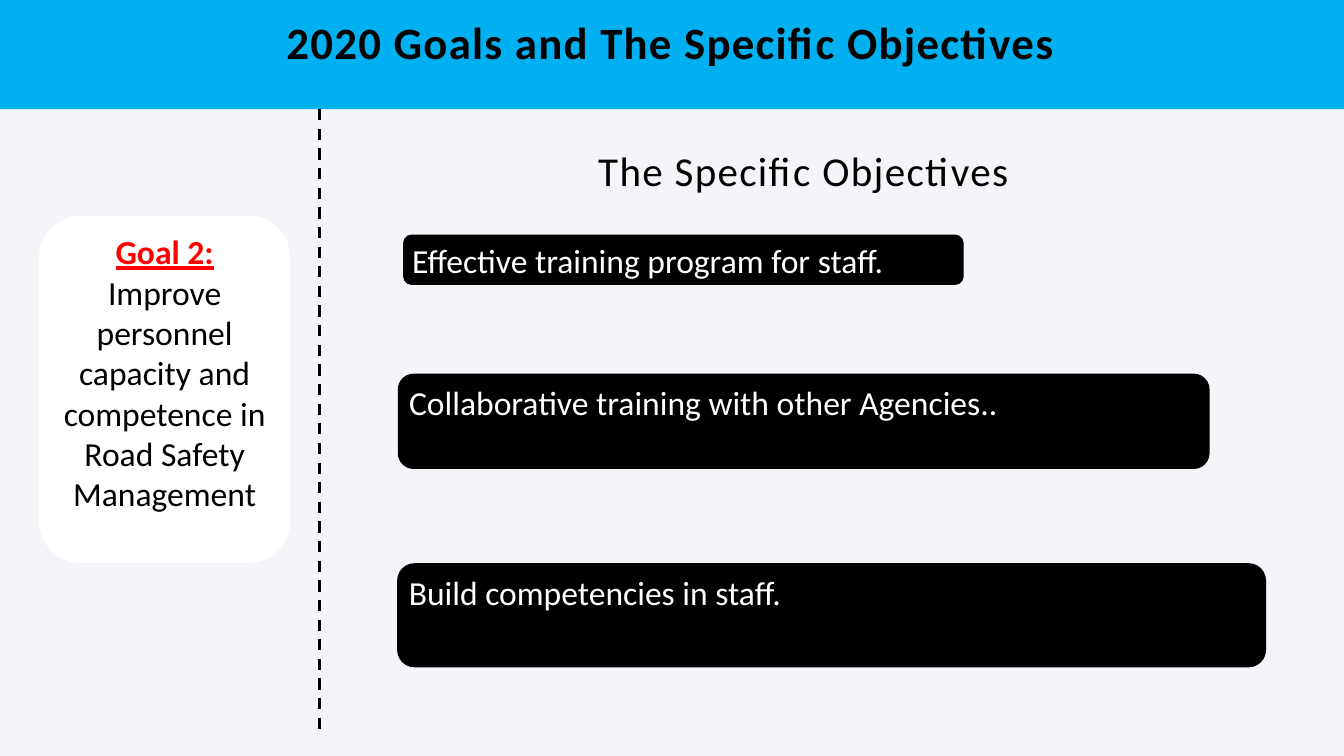
import pptx
import pptx.dml.color
import pptx.enum.dml
import pptx.enum.shapes
import pptx.enum.text
import pptx.oxml.ns
import pptx.util
from lxml import etree

Pt = pptx.util.Pt
RGBColor = pptx.dml.color.RGBColor
SHAPE = pptx.enum.shapes.MSO_SHAPE
ALIGN = pptx.enum.text.PP_ALIGN

PALE = RGBColor(0xF3, 0xF5, 0xF9)
BLUE = RGBColor(0x00, 0xB0, 0xF0)
INK = RGBColor(0x02, 0x03, 0x01)
BLACK = RGBColor(0, 0, 0)
WHITE = RGBColor(0xFF, 0xFF, 0xFF)
RED = RGBColor(0xFF, 0, 0)
FONT = "Calibri"
WIDTH, HEIGHT = 1440, 810
BAND_HEIGHT = 117


def add_run(p, text, size, color, bold=False, underline=False):
    """Add one formatted run and return it."""
    r = p.add_run()
    r.text = text
    r.font.name = FONT
    r.font.size = Pt(size)
    r.font.bold = bold
    r.font.underline = underline
    r.font.color.rgb = color
    return r


def add_block(s, kind, box, color):
    """Add a filled shape without outline, with text at the top."""
    sp = s.shapes.add_shape(kind, *map(Pt, box))
    sp.shadow.inherit = False
    sp.fill.solid()
    sp.fill.fore_color.rgb = color
    sp.line.fill.background()
    sp.text_frame.word_wrap = True
    sp.text_frame.vertical_anchor = pptx.enum.text.MSO_ANCHOR.TOP
    return sp


def set_heading(sp, box, text, size, bold):
    """Place a heading and fill it with letter-spaced, centred text."""
    sp.left, sp.top, sp.width, sp.height = map(Pt, box)
    tf = sp.text_frame
    tf.word_wrap = True
    tf.auto_size = pptx.enum.text.MSO_AUTO_SIZE.NONE
    tf.vertical_anchor = pptx.enum.text.MSO_ANCHOR.TOP
    tf.margin_left = tf.margin_top = tf.margin_right = tf.margin_bottom = 0
    p = tf.paragraphs[0]
    p.alignment = ALIGN.CENTER
    p.line_spacing = Pt(67.2)
    p.space_before = Pt(0)
    r = add_run(p, text, size, INK, bold)
    r.font._element.set("spc", "140")


def add_header(s, box, text):
    """Draw the title band and set the title on it."""
    x, y, w, h = box
    band = add_block(s, SHAPE.RECTANGLE, box, BLUE)
    title = s.shapes.title
    band.element.addnext(title.element)
    set_heading(title, (x + 191, y + 6.5, w - 385, 63.4), text, 48, True)


def add_goal(s, box, label, text):
    """Draw the goal card with its label and description."""
    tf = add_block(s, SHAPE.ROUNDED_RECTANGLE, box, WHITE).text_frame
    p = tf.paragraphs[0]
    p.alignment = ALIGN.CENTER
    add_run(p, label, 36, RED, bold=True, underline=True)
    p = tf.add_paragraph()
    p.alignment = ALIGN.CENTER
    add_run(p, text, 36, BLACK)


def add_divider(s, x, top, bottom):
    """Draw the dashed vertical divider."""
    line = s.shapes.add_connector(
        pptx.enum.shapes.MSO_CONNECTOR.STRAIGHT, Pt(x), Pt(top), Pt(x), Pt(bottom))
    line.line.color.rgb = BLACK
    line.line.width = Pt(3)
    line.line.dash_style = pptx.enum.dml.MSO_LINE.DASH
    etree.SubElement(line.element.spPr, pptx.oxml.ns.qn("a:effectLst"))


def add_objectives(s, box, heading, bars):
    """Draw the objectives heading and its bars, offset from the box."""
    x, y, w, h = box
    sp = s.shapes.add_textbox(0, 0, 0, 0)
    set_heading(sp, (x, y, w, 67.7), heading, 44, False)
    for text, dx, dy, width, height in bars:
        bar = add_block(s, SHAPE.ROUNDED_RECTANGLE, (x + dx, y + dy, width, height), BLACK)
        p = bar.text_frame.paragraphs[0]
        p.alignment = ALIGN.LEFT
        add_run(p, text, 36, WHITE)


def main():
    """Build and save the slide."""
    prs = pptx.Presentation()
    prs.slide_width, prs.slide_height = Pt(WIDTH), Pt(HEIGHT)
    s = prs.slides.add_slide(prs.slide_layouts.get_by_name("Title Only"))
    s.background.fill.solid()
    s.background.fill.fore_color.rgb = PALE
    add_header(s, (0, 0, WIDTH, BAND_HEIGHT), "2020 Goals and The Specific Objectives")
    add_goal(s, (41.8, 231, 269.3, 372.2), "Goal 2:",
             "Improve personnel capacity and competence in Road Safety Management")
    add_divider(s, 342, BAND_HEIGHT, 786)
    add_objectives(s, (360, 141, 1002, 574), "The Specific Objectives", [
        ("Effective training program for staff.", 72, 110.3, 600.5, 54),
        ("Collaborative training with other Agencies..", 66.2, 259.3, 869.8, 102.2),
        ("Build competencies in staff.", 65.5, 462.4, 931, 111.6),
    ])
    prs.save("out.pptx")


if __name__ == "__main__":
    main()
